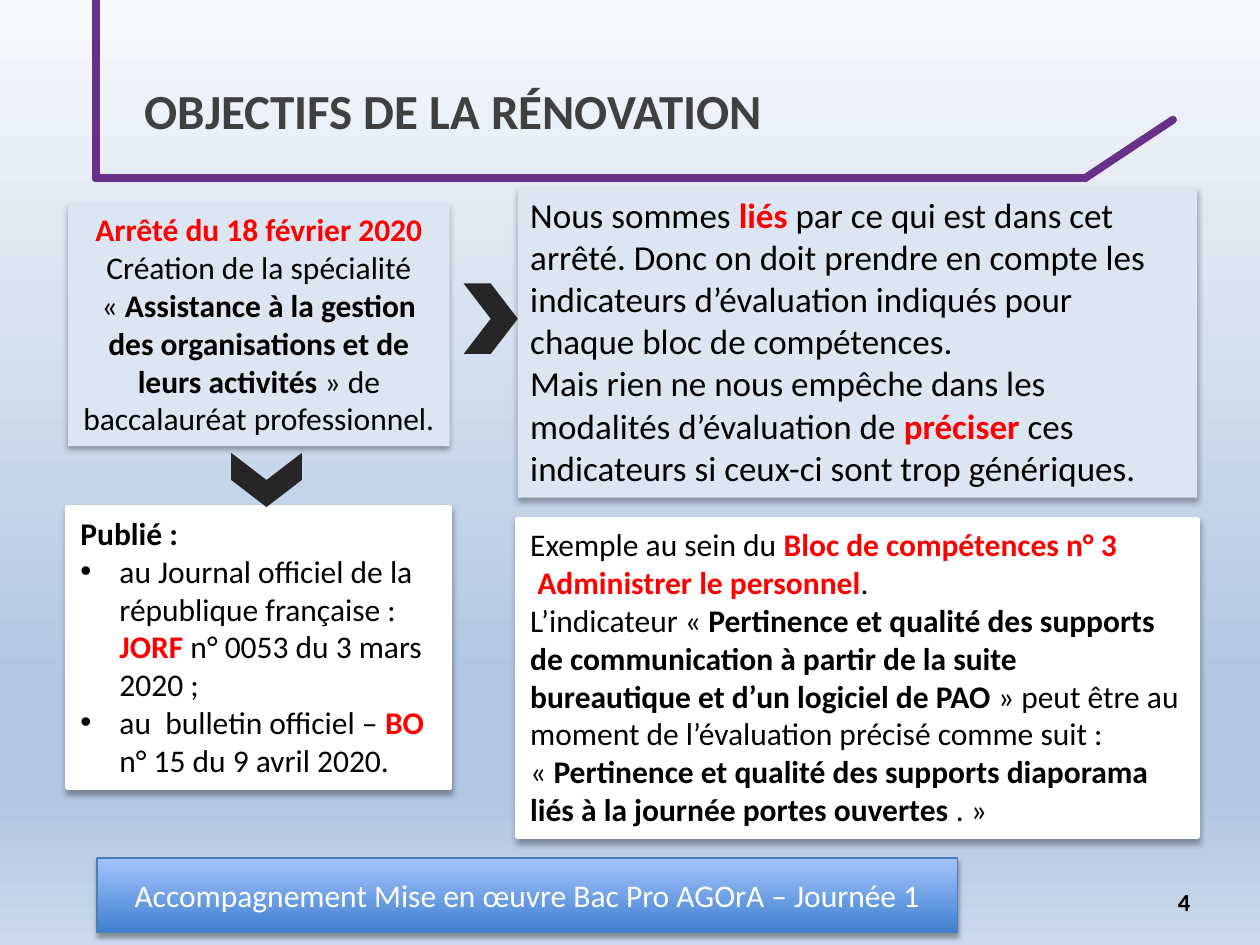
from pptx import Presentation
from pptx.dml.color import RGBColor
from pptx.enum.shapes import MSO_CONNECTOR, MSO_SHAPE
from pptx.enum.text import MSO_ANCHOR, MSO_AUTO_SIZE, PP_ALIGN
from pptx.oxml.ns import qn
from pptx.util import Inches, Pt
from lxml import etree

RECTANGLE, CHEVRON = MSO_SHAPE.RECTANGLE, MSO_SHAPE.CHEVRON
STRAIGHT = MSO_CONNECTOR.STRAIGHT
TOP, MIDDLE = MSO_ANCHOR.TOP, MSO_ANCHOR.MIDDLE
LEFT, CENTER = PP_ALIGN.LEFT, PP_ALIGN.CENTER
GROW = MSO_AUTO_SIZE.SHAPE_TO_FIT_TEXT

BLACK = RGBColor(0x00, 0x00, 0x00)
WHITE = RGBColor(0xFF, 0xFF, 0xFF)
RED = RGBColor(0xFF, 0x00, 0x00)
PALE_BLUE = RGBColor(0xDC, 0xE6, 0xF2)
PURPLE = RGBColor(0x68, 0x30, 0x86)
CHARCOAL = RGBColor(0x26, 0x26, 0x26)
TITLE_GRAY = RGBColor(0x40, 0x40, 0x40)
FOOTER_EDGE = RGBColor(0x4B, 0x7E, 0xBC)
FOOTER_DARK = RGBColor(0x3F, 0x80, 0xCE)
FOOTER_LIGHT = RGBColor(0xA4, 0xC4, 0xFF)
SKY = [(0, RGBColor(0xF6, 0xF9, 0xFC)), (74, RGBColor(0xB0, 0xC6, 0xE1)),
       (83, RGBColor(0xB0, 0xC6, 0xE1)), (100, RGBColor(0xCA, 0xD9, 0xEB))]

deck = Presentation()
deck.slide_width, deck.slide_height = Inches(10), Inches(7.5)
COL, ROW = deck.slide_width / 100, deck.slide_height / 75
page = deck.slides.add_slide(deck.slide_layouts[6])


def write(frame, paragraphs, size, color=BLACK, align=LEFT, anchor=TOP):
    """Fill a frame; each span is (text, style): b = bold, r = bold red, * = bullet."""
    frame.word_wrap, frame.vertical_anchor = True, anchor
    for index, spans in enumerate(paragraphs):
        para = frame.add_paragraph() if index else frame.paragraphs[0]
        para.alignment = align
        if "*" in spans[0][1]:
            properties = para._p.get_or_add_pPr()
            properties.set("marL", str(Inches(0.31)))
            properties.set("indent", str(-Inches(0.31)))
            etree.SubElement(properties, qn("a:buFont"), typeface="Arial")
            etree.SubElement(properties, qn("a:buChar"), char="•")
        para.font.name, para.font.size = "Calibri", Pt(size)
        for text, style in spans:
            span = para.add_run()
            span.text = text
            span.font.bold = "b" in style or "r" in style
            span.font.color.rgb = RED if "r" in style else color


def add_block(kind, left, top, width, height, shadow=None):
    """Add a shape placed in columns and rows; shadow is (opacity, blur, distance)."""
    block = page.shapes.add_shape(kind, int(left * COL), int(top * ROW),
                                  int(width * COL), int(height * ROW))
    block.line.fill.background()
    block.shadow.inherit = False
    if shadow:
        opacity, blur, distance = shadow
        effects = block._element.spPr.find(qn("a:effectLst"))
        outer = etree.SubElement(effects, qn("a:outerShdw"), blurRad=str(Pt(blur)),
                                 dist=str(Pt(distance)), dir="5400000", rotWithShape="0")
        shade = etree.SubElement(outer, qn("a:srgbClr"), val=str(BLACK))
        etree.SubElement(shade, qn("a:alpha"), val=str(opacity * 1000))
    return block


# Background, light at the top
backdrop = page.background.fill
backdrop.gradient()
backdrop.gradient_angle = 270
stops = page.element.find(".//" + qn("a:gsLst"))
for stop in list(stops):
    stops.remove(stop)
for position, color in SKY:
    stop = etree.SubElement(stops, qn("a:gs"), pos=str(position * 1000))
    etree.SubElement(stop, qn("a:srgbClr"), val=str(color))

# Purple line around the title
corners = [(7.6, 0), (7.6, 14.15), (86.1, 14.15), (93.1, 9.5)]
for (x1, y1), (x2, y2) in zip(corners, corners[1:]):
    rule = page.shapes.add_connector(STRAIGHT, int(x1 * COL), int(y1 * ROW),
                                     int(x2 * COL), int(y2 * ROW))
    rule.line.color.rgb, rule.line.width = PURPLE, Pt(4.5)
    rule.line._get_or_add_ln().set("cap", "rnd")
    etree.SubElement(rule._element.spPr, qn("a:effectLst"))

# Title and page number
labels = [
    (10.5, 1.7, 86.2, 14.1, "OBJECTIFS DE LA RÉNOVATION", 28, TITLE_GRAY, MIDDLE),
    (92.5, 69.9, 6.7, 4, "4", 14, BLACK, TOP),
]
for left, top, width, height, text, size, color, anchor in labels:
    box = page.shapes.add_textbox(int(left * COL), int(top * ROW),
                                  int(width * COL), int(height * ROW))
    write(box.text_frame, [[(text, "b")]], size, color, anchor=anchor)

# Four cards in two columns
LEFT_CARD, RIGHT_CARD = (5.4, 30.3), (41.1, 53.9)
decree = [
    [("Arrêté du 18 février 2020", "r")],
    [("Création de la spécialité «\u00a0", ""),
     ("Assistance à la gestion des organisations et de leurs activités", "b"),
     ("\u00a0» de baccalauréat professionnel.", "")],
]
commitment = [
    [("Nous sommes ", ""), ("liés", "r"),
     (" par ce qui est dans cet arrêté. Donc on doit prendre en compte les "
      "indicateurs d’évaluation indiqués pour chaque bloc de compétences.", "")],
    [("Mais rien ne nous empêche dans les modalités d’évaluation de ", ""),
     ("préciser", "r"),
     (" ces indicateurs si ceux-ci sont trop génériques.", "")],
]
publication = [
    [("Publié :", "b")],
    [("au Journal officiel de la république française : ", "*"), ("JORF", "r"),
     (" n° 0053 du 3 mars 2020 ;", "")],
    [("au \u00a0bulletin officiel – ", "*"), ("BO", "r"),
     (" n° 15 du 9 avril 2020.", "")],
]
example = [
    [("Exemple au sein du ", ""), ("Bloc de compétences n° 3", "r")],
    [(" ", ""), ("Administrer le personnel", "r"), (".", "")],
    [("L’indicateur «\u00a0", ""),
     ("Pertinence et qualité des supports de communication à partir de la suite "
      "bureautique et d’un logiciel de PAO\u00a0", "b"),
     ("» peut être au moment de l’évaluation précisé comme suit : «\u00a0", ""),
     ("Pertinence et qualité des supports diaporama liés à la journée portes "
      "ouvertes ", "b"),
     (".\u00a0»", "")],
]
cards = [
    (LEFT_CARD, 16.2, 19.2, PALE_BLUE, decree, 18, CENTER),
    (RIGHT_CARD, 14.9, 24.6, PALE_BLUE, commitment, 20, LEFT),
    (LEFT_CARD, 40.3, 22.2, WHITE, publication, 18, LEFT),
    (RIGHT_CARD, 41.2, 25.2, WHITE, example, 18, LEFT),
]
for (left, width), top, height, color, paragraphs, size, align in cards:
    card = add_block(RECTANGLE, left, top, width, height, (32, 3.5, 2.2))
    card.fill.solid()
    card.fill.fore_color.rgb = color
    if color == WHITE:
        card.line.color.rgb, card.line.width = WHITE, Pt(3)
    write(card.text_frame, paragraphs, size, align=align)
    card.text_frame.auto_size = GROW

# Chevrons from the decree to its consequences
for left, top, turn in [(36.8, 22.5, 0), (19, 35.3, 90)]:
    chevron = add_block(CHEVRON, left, top, 4.3, 5.6)
    chevron.rotation = turn
    chevron.fill.solid()
    chevron.fill.fore_color.rgb = CHARCOAL

# Footer banner
footer = add_block(RECTANGLE, 7.7, 68.1, 68.3, 5.9, (35, 3.1, 1.8))
footer.fill.gradient()
footer.fill.gradient_angle = 90
for stop, color in zip(footer.fill.gradient_stops, (FOOTER_DARK, FOOTER_LIGHT)):
    stop.color.rgb = color
footer.line.color.rgb, footer.line.width = FOOTER_EDGE, Pt(0.75)
write(footer.text_frame, [[("Accompagnement Mise en œuvre Bac Pro AGOrA – Journée 1", "")]],
      18, WHITE, CENTER, MIDDLE)

deck.save("out.pptx")
